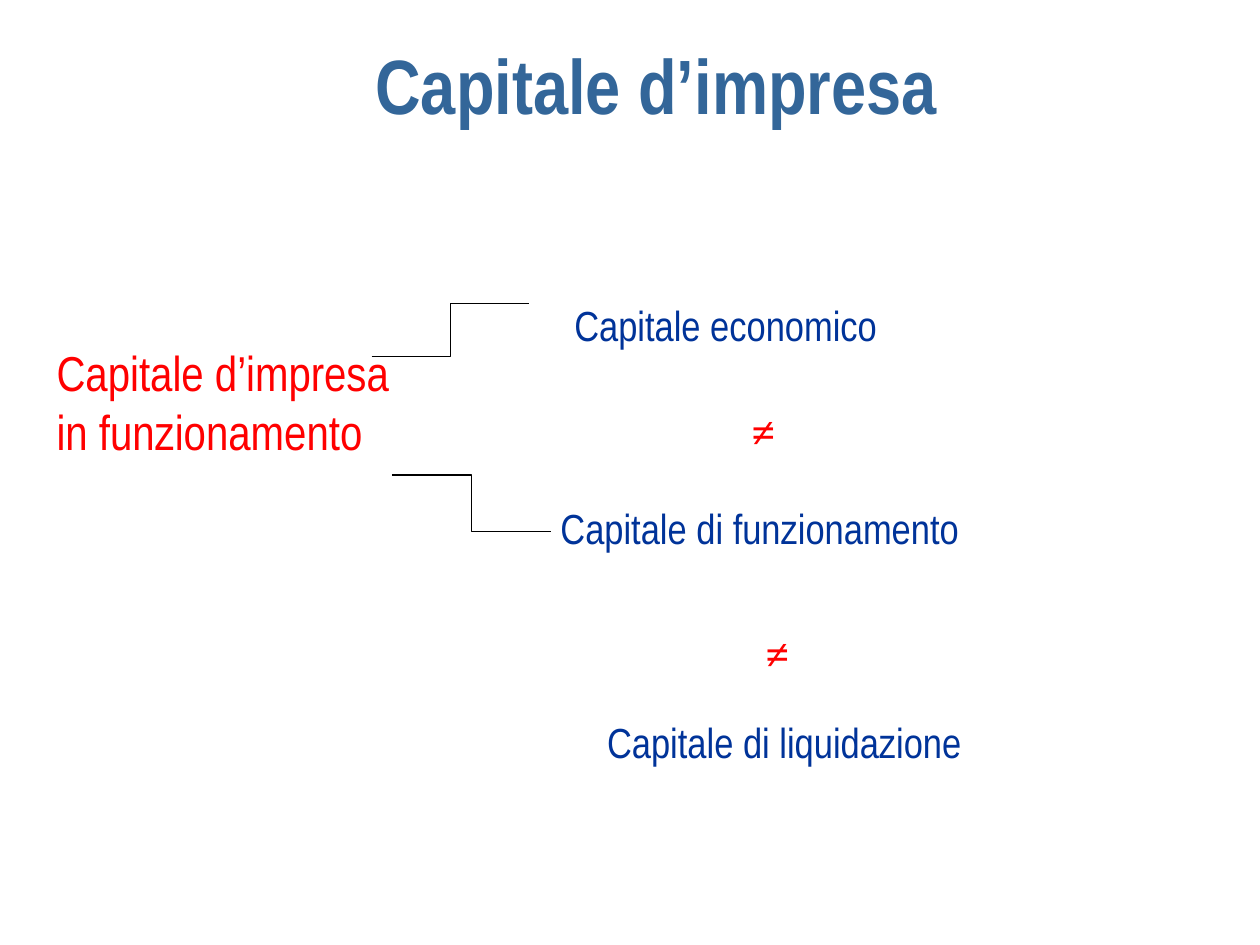
from pptx import Presentation, util as u
from pptx.dml.color import RGBColor
from pptx.enum import shapes, text
from pptx.oxml.ns import qn
from lxml import etree

PX = 9144  # EMU per px, 100 px to the inch
COLORS = {
    "background": "FFFFFF",
    "title": "336699",
    "accent": "FF0000",
    "capital": "003399",
    "line": "000000",
}


def px(*lengths):
    return [u.Emu(length * PX) for length in lengths]


def write(shape, words, size, color, font="Arial Narrow", bold=False,
          align=text.PP_ALIGN.LEFT):
    frame = shape.text_frame
    frame.word_wrap = True
    frame.auto_size = text.MSO_AUTO_SIZE.NONE
    frame.vertical_anchor = text.MSO_ANCHOR.TOP
    frame.margin_left, frame.margin_top, frame.margin_right, frame.margin_bottom = px(10, 5, 10, 5)
    paragraph = frame.paragraphs[0]
    paragraph.alignment = align
    run = paragraph.add_run()
    run.text = words
    run.font.name = font
    run.font.size = u.Pt(size)
    run.font.bold = bold
    run.font.color.rgb = RGBColor.from_string(COLORS[color])


def add_label(slide, box, words, size, color, **style):
    write(slide.shapes.add_textbox(*px(*box)), words, size, color, **style)


def add_elbow(slide, start, end):
    elbow = slide.shapes.add_connector(
        shapes.MSO_CONNECTOR.ELBOW, *px(*start, *end))
    elbow.line.color.rgb = RGBColor.from_string(COLORS["line"])
    elbow.line.width = u.Pt(0.75)
    etree.SubElement(elbow._element.spPr, qn("a:effectLst"))


def place_title(slide, box):
    title = slide.shapes.title
    title.left, title.top, title.width, title.height = px(*box)
    write(title, "Capitale d’impresa", 44, "title", bold=True,
          align=text.PP_ALIGN.CENTER)


def add_going_concern(slide, box):
    """Main concept with its two branches."""
    left, top, _, _ = box
    add_label(slide, box, "Capitale d’impresa in funzionamento", 28, "accent")
    add_elbow(slide, (left + 260, top + 16), (left + 385, top - 26))
    add_elbow(slide, (left + 276, top + 110), (left + 402, top + 155))


def add_capitals(slide, box):
    """Three kinds of capital, set apart by inequality signs."""
    left, top, _, _ = box
    for x, y, width, words in (
        (11, 0, 316, "Capitale economico"),
        (0, 161, 424, "Capitale di funzionamento"),
        (37, 331, 327, "Capitale di liquidazione"),
    ):
        add_label(slide, (left + x, top + y, width, 50), words, 24, "capital")
    for x, y in ((152, 84), (163, 260)):
        add_label(slide, (left + x, top + y, 60, 50), "≠", 24, "accent",
                  font="Times New Roman", bold=True)


def main():
    deck = Presentation()
    deck.slide_width, deck.slide_height = px(1000, 750)
    slide = deck.slides.add_slide(deck.slide_layouts[5])
    fill = slide.background.fill
    fill.solid()
    fill.fore_color.rgb = RGBColor.from_string(COLORS["background"])
    place_title(slide, (67, 25, 908, 84))
    add_going_concern(slide, (35, 267, 299, 150))
    add_capitals(slide, (435, 233, 424, 421))
    deck.save("out.pptx")


if __name__ == "__main__":
    main()
